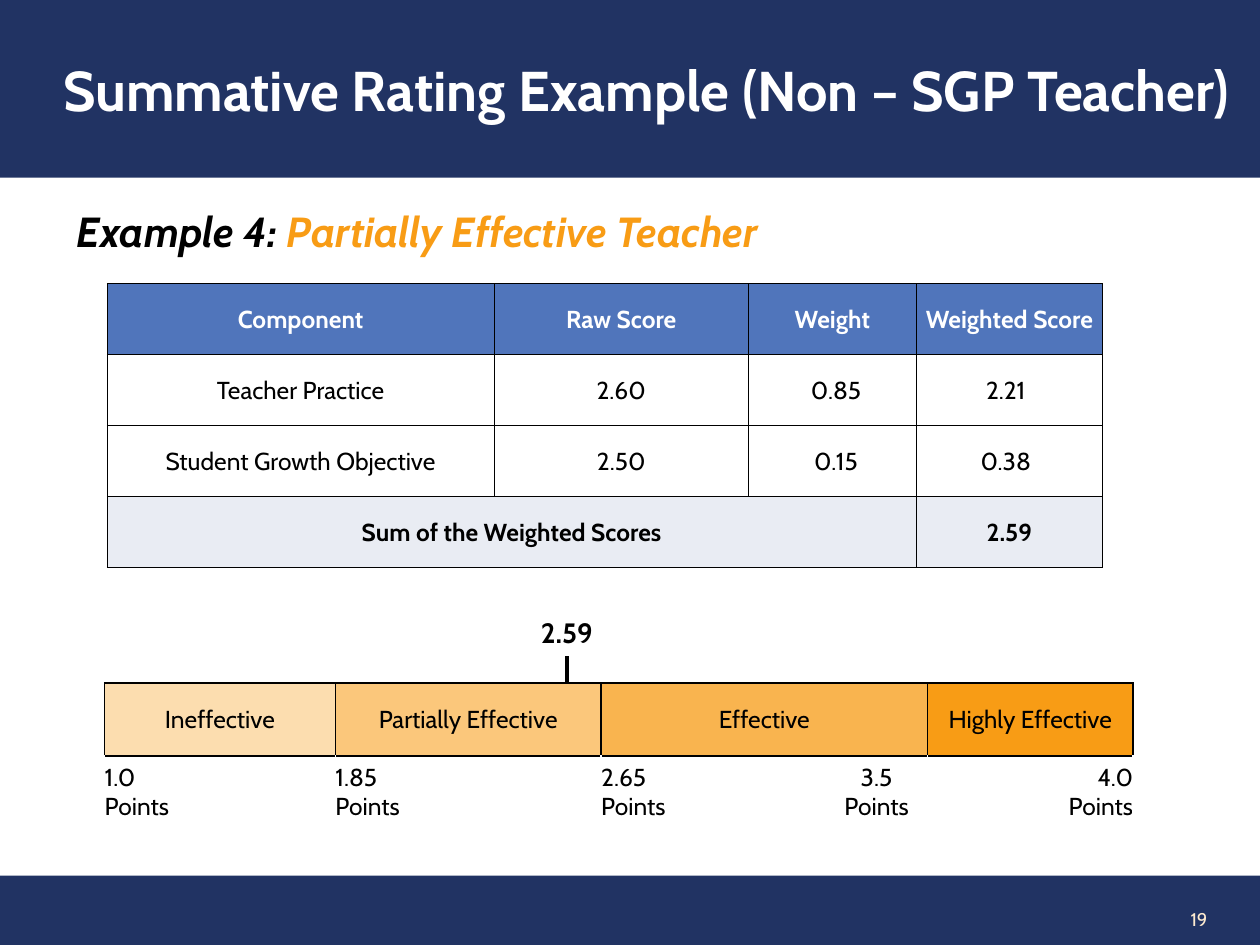
from dataclasses import dataclass
from itertools import product

from lxml.etree import SubElement as Sub
from pptx import Presentation
from pptx.dml.color import RGBColor as Rgb
from pptx.enum.shapes import MSO_CONNECTOR as Link, MSO_SHAPE as Kind
from pptx.enum.text import MSO_ANCHOR as Anchor, MSO_AUTO_SIZE as Fit, PP_ALIGN as Align
from pptx.oxml.ns import qn
from pptx.util import Cm, Pt


@dataclass(frozen=True)
class Theme:
    font: str = "Cabin"
    navy: str = "213363"
    blue: str = "5075BB"
    pale: str = "E9ECF3"
    gold: str = "F89C15"
    cream: str = "FEEBD0"
    white: str = "FFFFFF"
    black: str = "000000"
    title: float = 32
    lead: float = 24
    mark: float = 16
    body: float = 14
    small: float = 10.5


@dataclass(frozen=True)
class Box:
    """A region in centimetres."""
    x: float
    y: float
    w: float
    h: float

    def inset(self, dx, dy, w, h):
        return Box(self.x + dx, self.y + dy, w, h)

    def place(self):
        return [Cm(v) for v in (self.x, self.y, self.w, self.h)]


T = Theme()


def add_run(para, text, size, color=T.black, bold=False, italic=False):
    run = para.add_run()
    run.text = text
    font = run.font
    font.name, font.size, font.bold, font.italic = T.font, Pt(size), bold, italic
    font.color.rgb = Rgb.from_string(color)


def set_pad(item, left, top, right, low):
    item.margin_left, item.margin_top = Cm(left), Cm(top)
    item.margin_right, item.margin_bottom = Cm(right), Cm(low)


def paint(item, color, alpha=100):
    item.fill.solid()
    item.fill.fore_color.rgb = Rgb.from_string(color)
    if alpha < 100:
        tint = item.fill._xPr.find(".//" + qn("a:solidFill") + "[last()]/" + qn("a:srgbClr"))
        Sub(tint, qn("a:alpha"), val=str(alpha * 1000))


def add_text(slide, box, align, wrap=True):
    frame = slide.shapes.add_textbox(*box.place()).text_frame
    frame.word_wrap = wrap
    frame.vertical_anchor = Anchor.MIDDLE
    para = frame.paragraphs[0]
    para.alignment = align
    return para


def add_edges(cell, left, right, top, low):
    """Give each side a (color, width) border; call after filling the cell."""
    props = cell._tc.get_or_add_tcPr()
    sides = zip(("lnL", "lnR", "lnT", "lnB"), (left, right, top, low))
    for n, (tag, (color, width)) in enumerate(sides):
        line = Sub(props, qn("a:" + tag), w=str(Pt(width)))
        Sub(Sub(line, qn("a:solidFill")), qn("a:srgbClr"), val=color)
        props.insert(n, line)


def add_grid(slide, box, cols, rows):
    grid = slide.shapes.add_table(len(rows), len(cols), *box.place()).table
    grid.first_row = grid.horz_banding = False
    for col, width in zip(grid.columns, cols):
        col.width = Cm(width)
    for row, height in zip(grid.rows, rows):
        row.height = Cm(height)
    return grid


def add_title(slide, box, text):
    title = slide.shapes.title
    title.left, title.top, title.width, title.height = box.place()
    paint(title, T.navy)
    frame = title.text_frame
    frame.auto_size, frame.word_wrap = Fit.NONE, True
    frame.vertical_anchor = Anchor.MIDDLE
    set_pad(frame, 1.27, 0.13, 0.25, 0.13)
    para = frame.paragraphs[0]
    para.alignment = Align.LEFT
    add_run(para, text, T.title, T.white, bold=True)


def add_lead(slide, box, label, rating):
    para = add_text(slide, box, Align.LEFT, wrap=False)
    add_run(para, label, T.lead, bold=True, italic=True)
    add_run(para, rating, T.lead, T.gold, bold=True, italic=True)


def add_scores(slide, box):
    data = [
        ["Component", "Raw Score", "Weight", "Weighted Score"],
        ["Teacher Practice", "2.60", "0.85", "2.21"],
        ["Student Growth Objective", "2.50", "0.15", "0.38"],
        ["Sum of the Weighted Scores", "", "", "2.59"],
    ]
    last = len(data) - 1
    grid = add_grid(slide, box, [7.8, 5.13, 3.38, 3.76], [box.h / len(data)] * len(data))
    thin, thick = (T.black, 0.5), (T.black, 1)
    for r, c in product(range(len(data)), range(4)):
        cell = grid.cell(r, c)
        edge = thick if c == 3 else thin
        paint(cell, {0: T.blue, last: T.pale}.get(r, T.white))
        add_edges(cell, thin, edge, edge, edge)
        inner = 0 < r < last
        set_pad(cell, 0.18 if inner and c == 2 else 0.03, 0.03,
                0.18 if inner and c == 3 else 0.03, 0)
        cell.vertical_anchor = Anchor.MIDDLE
        if data[r][c]:
            para = cell.text_frame.paragraphs[0]
            para.alignment = Align.CENTER
            add_run(para, data[r][c], T.body, T.white if r == 0 else T.black, bold=not inner)
    grid.cell(last, 0).merge(grid.cell(last, 2))


def add_scale(slide, box):
    # Each band: width, name, opacity, point lines, their alignment
    bands = [
        (4.65, "Ineffective", 34, ["1.0", "Points"], Align.LEFT),
        (5.36, "Partially Effective", 56, ["1.85", "Points"], Align.LEFT),
        (6.58, "Effective", 75, ["2.65\t3.5", "Points\tPoints"], Align.LEFT),
        (4.14, "Highly Effective", 100, ["4.0", "Points"], Align.RIGHT),
    ]
    tab = Cm(5.55)
    dark, light = (T.black, 1), (T.white, 1)
    grid = add_grid(slide, box, [band[0] for band in bands], [1.47, box.h - 1.47])
    for c, (_, name, alpha, lines, align) in enumerate(bands):
        # Rating name
        head = grid.cell(0, c)
        paint(head, T.gold, alpha)
        add_edges(head, dark, dark, dark, dark)
        head.vertical_anchor = Anchor.MIDDLE
        para = head.text_frame.paragraphs[0]
        para.alignment = Align.CENTER
        add_run(para, name, T.body)
        # Point limits
        foot = grid.cell(1, c)
        foot.fill.background()
        add_edges(foot, light, light, dark, light)
        set_pad(foot, 0, 0.13, 0, 0)
        frame = foot.text_frame
        for n, line in enumerate(lines):
            para = frame.add_paragraph() if n else frame.paragraphs[0]
            para.alignment = align
            if "\t" in line:
                stops = Sub(para._p.get_or_add_pPr(), qn("a:tabLst"))
                Sub(stops, qn("a:tab"), pos=str(tab), algn="ctr")
            add_run(para, line, T.body)


def add_mark(slide, box, text):
    """A score with a tick that points down at the scale."""
    para = add_text(slide, box.inset(0, 0, box.w, 0.94), Align.CENTER)
    add_run(para, text, T.mark, bold=True)
    mid = Cm(box.x + box.w / 2)
    tick = slide.shapes.add_connector(
        Link.STRAIGHT, mid, Cm(box.y + 0.96), mid, Cm(box.y + box.h))
    tick.line.color.rgb = Rgb.from_string(T.black)
    tick.line.width = Pt(2)
    Sub(tick._element.spPr, qn("a:effectLst"))


def add_foot(slide, box, page):
    band = slide.shapes.add_shape(Kind.RECTANGLE, *box.place())
    band.shadow.inherit = False
    paint(band, T.navy)
    band.line.fill.background()
    para = add_text(slide, box.inset(20.88, 0.36, 3.71, 1.02), Align.RIGHT)
    add_run(para, page, T.small, T.cream)


def main():
    deck = Presentation()
    deck.slide_width, deck.slide_height = Cm(25.4), Cm(19.05)
    slide = deck.slides.add_slide(deck.slide_layouts.get_by_name("Title Only"))
    add_foot(slide, Box(0, 17.65, 25.4, 1.4), "19")
    add_title(slide, Box(0, 0, 25.4, 3.58), "Summative Rating Example (Non – SGP Teacher)")
    add_scale(slide, Box(2.11, 13.77, 20.73, 3.17))
    add_mark(slide, Box(10.16, 12.27, 2.54, 1.47), "2.59")
    add_scores(slide, Box(2.16, 5.72, 20.07, 5.72))
    add_lead(slide, Box(1.3, 4.01, 14.25, 1.27), "Example 4:", " Partially Effective Teacher")
    deck.save("out.pptx")


if __name__ == "__main__":
    main()
